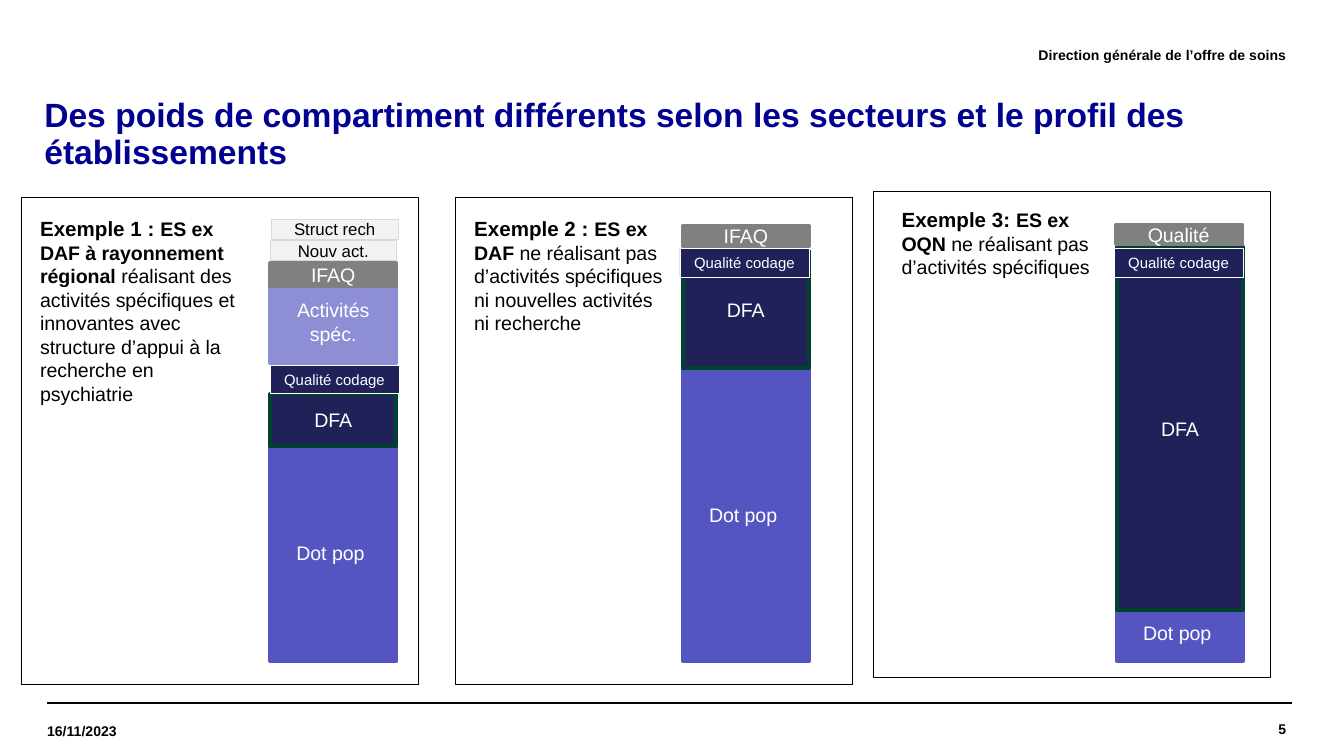
from dataclasses import dataclass

import pptx
import pptx.dml.color
import pptx.enum.shapes
import pptx.enum.text
import pptx.oxml
import pptx.util
from pptx.util import Inches

ALIGN = pptx.enum.text.PP_ALIGN
ANCHOR = pptx.enum.text.MSO_ANCHOR


@dataclass(frozen=True)
class Theme:
    font: str = "Arial"
    black: str = "000000"
    white: str = "FFFFFF"
    title_blue: str = "000091"
    violet: str = "5555C1"
    navy: str = "21215A"
    green: str = "004130"
    lilac: str = "8E8ED5"
    grey: str = "808080"
    pale: str = "F2F2F2"
    pale_edge: str = "D9D9D9"
    title_size: float = 18
    lead_size: float = 11
    body_size: float = 10.5
    small_size: float = 9
    coding_size: float = 8
    footer_size: float = 7.5
    thick: float = 2
    rule: float = 0.8
    thin: float = 0.25


THEME = Theme()


@dataclass(frozen=True)
class Run:
    text: str
    size: float
    color: str = THEME.black
    bold: bool = False


@dataclass(frozen=True)
class Box:
    left: float
    top: float
    width: float
    height: float

    def lengths(self) -> list:
        return [Inches(v) for v in (self.left, self.top, self.width, self.height)]


@dataclass(frozen=True)
class BarStyle:
    fill: str
    edge: str
    edge_width: float = THEME.thick
    size: float = THEME.body_size
    color: str = THEME.white
    margins: tuple = (0.1, 0.05)


POPULATION = BarStyle(THEME.violet, THEME.violet)
ACTIVITY = BarStyle(THEME.navy, THEME.green)
SPECIFIC = BarStyle(THEME.lilac, THEME.lilac)
QUALITY = BarStyle(THEME.grey, THEME.grey)
MINOR = BarStyle(THEME.pale, THEME.pale_edge, THEME.thin, THEME.small_size, THEME.black)
CODING = BarStyle(THEME.navy, THEME.white, THEME.thin, THEME.coding_size,
                  margins=(0.04, 0.05))


@dataclass(frozen=True)
class Bar:
    label: str
    box: Box
    style: BarStyle


@dataclass(frozen=True)
class Example:
    frame: tuple  # left, top
    note: Box
    heading: str
    sector: str
    detail: str
    bars: tuple


FRAME_SIZE = (2.95, 3.62)
BAR_W, CODING_W, CODING_H, THIN_H = 0.94, 0.96, 0.21, 0.15

EXAMPLES = (
    Example((0.16, 1.47), Box(0.2, 1.56, 1.65, 1.52),
            "Exemple 1 : ", "ES ex DAF à rayonnement régional ",
            "réalisant des activités spécifiques et innovantes avec structure "
            "d’appui à la recherche en psychiatrie",
            (Bar("Dot pop ", Box(2.01, 3.31, BAR_W, 1.61), POPULATION),
             Bar("DFA", Box(2.01, 2.93, BAR_W, 0.39), ACTIVITY),
             Bar("Activités spéc.", Box(2.01, 2.09, BAR_W, 0.61), SPECIFIC),
             Bar("Struct rech", Box(2.02, 1.63, BAR_W, THIN_H), MINOR),
             Bar("IFAQ", Box(2.01, 1.96, BAR_W, 0.17), QUALITY),
             Bar("Nouv act.", Box(2.01, 1.79, BAR_W, THIN_H), MINOR),
             Bar("Qualité codage", Box(2.01, 2.72, CODING_W, CODING_H), CODING))),
    Example((3.39, 1.47), Box(3.43, 1.56, 1.65, 0.99),
            "Exemple 2 : ", "ES ex DAF ",
            "ne réalisant pas d’activités spécifiques ni nouvelles activités ni recherche",
            (Bar("Dot pop ", Box(5.08, 2.74, BAR_W, 2.18), POPULATION),
             Bar("DFA", Box(5.08, 1.87, BAR_W, 0.87), ACTIVITY),
             Bar("IFAQ", Box(5.08, 1.68, BAR_W, THIN_H), QUALITY),
             Bar("Qualité codage", Box(5.06, 1.85, CODING_W, CODING_H), CODING))),
    Example((6.5, 1.42), Box(6.61, 1.49, 1.65, 0.64),
            "Exemple 3: ", "ES ex OQN ",
            "ne réalisant pas d’activités spécifiques",
            (Bar("Dot pop ", Box(8.31, 4.5, BAR_W, 0.42), POPULATION),
             Bar("DFA", Box(8.31, 1.84, BAR_W, 2.7), ACTIVITY),
             Bar("Qualité", Box(8.3, 1.67, BAR_W, THIN_H), QUALITY),
             Bar("Qualité codage", Box(8.29, 1.85, CODING_W, CODING_H), CODING))),
)


def rgb(value: str) -> pptx.dml.color.RGBColor:
    return pptx.dml.color.RGBColor.from_string(value)


def write(shape, runs: list, align=ALIGN.LEFT, anchor=ANCHOR.TOP,
          margins: tuple = (0.1, 0.05)):
    frame = shape.text_frame
    frame.word_wrap = True
    frame.vertical_anchor = anchor
    frame.margin_left = frame.margin_right = Inches(margins[0])
    frame.margin_top = frame.margin_bottom = Inches(margins[1])
    paragraph = frame.paragraphs[0]
    paragraph.alignment = align
    for item in runs:
        run = paragraph.add_run()
        run.text = item.text
        run.font.name = THEME.font
        run.font.size = pptx.util.Pt(item.size)
        run.font.bold = item.bold
        run.font.color.rgb = rgb(item.color)
    return frame


def draw_rectangle(slide, box: Box, edge: str, edge_width: float, fill: str = ""):
    shape = slide.shapes.add_shape(
        pptx.enum.shapes.MSO_SHAPE.RECTANGLE, *box.lengths())
    shape.shadow.inherit = False
    if fill:
        shape.fill.solid()
        shape.fill.fore_color.rgb = rgb(fill)
    else:
        shape.fill.background()
    shape.line.color.rgb = rgb(edge)
    shape.line.width = pptx.util.Pt(edge_width)
    return shape


def draw_bar(slide, bar: Bar) -> None:
    style = bar.style
    shape = draw_rectangle(slide, bar.box, style.edge, style.edge_width, style.fill)
    write(shape, [Run(bar.label, style.size, style.color)],
          ALIGN.CENTER, ANCHOR.MIDDLE, style.margins)


def draw_example(slide, example: Example) -> None:
    for bar in example.bars:
        draw_bar(slide, bar)
    draw_rectangle(slide, Box(*example.frame, *FRAME_SIZE), THEME.black, THEME.thin)
    note = slide.shapes.add_textbox(*example.note.lengths())
    frame = write(note, [Run(example.heading, THEME.lead_size, bold=True),
                         Run(example.sector, THEME.body_size, bold=True),
                         Run(example.detail, THEME.body_size)])
    frame.auto_size = pptx.enum.text.MSO_AUTO_SIZE.SHAPE_TO_FIT_TEXT


def draw_rule(slide, left: float, right: float, y: float) -> None:
    rule = slide.shapes.add_connector(
        pptx.enum.shapes.MSO_CONNECTOR.STRAIGHT,
        Inches(left), Inches(y), Inches(right), Inches(y))
    rule.line.color.rgb = rgb(THEME.black)
    rule.line.width = pptx.util.Pt(THEME.rule)
    properties = rule.element.spPr
    properties.append(pptx.oxml.parse_xml(
        '<a:effectLst xmlns:a="http://schemas.openxmlformats.org/drawingml/2006/main"/>'))


def draw_page_text(slide, text: str, box: Box, align) -> None:
    write(slide.shapes.add_textbox(*box.lengths()),
          [Run(text, THEME.footer_size, bold=True)], align, ANCHOR.MIDDLE, (0, 0))


def main() -> None:
    # Widescreen 16:9 page
    deck = pptx.Presentation()
    deck.slide_width, deck.slide_height = Inches(10), Inches(10 * 9 / 16)
    slide = deck.slides.add_slide(deck.slide_layouts[6])

    # Footer rule, page number, date and department
    for left in (0.35, 0.39):
        draw_rule(slide, left, left + 9.22, 5.23)
    draw_page_text(slide, "5", Box(8.09, 5.23, 1.48, 0.39), ALIGN.RIGHT)
    draw_page_text(slide, "16/11/2023", Box(0.35, 5.25, 1.32, 0.38), ALIGN.LEFT)
    draw_page_text(slide, "Direction générale de l’offre de soins",
                   Box(3.14, 0.21, 6.43, 0.39), ALIGN.RIGHT)

    # Title
    title = write(slide.shapes.add_textbox(*Box(0.22, 0.71, 9.21, 0.59).lengths()),
                  [Run("Des poids de compartiment différents selon les secteurs "
                       "et le profil des établissements",
                       THEME.title_size, THEME.title_blue, True)],
                  anchor=ANCHOR.MIDDLE)
    title.margin_left = Inches(0.11)
    title.paragraphs[0].line_spacing = 0.9

    # Three examples, each with its stacked compartments
    for example in EXAMPLES:
        draw_example(slide, example)

    deck.save("out.pptx")


if __name__ == "__main__":
    main()
